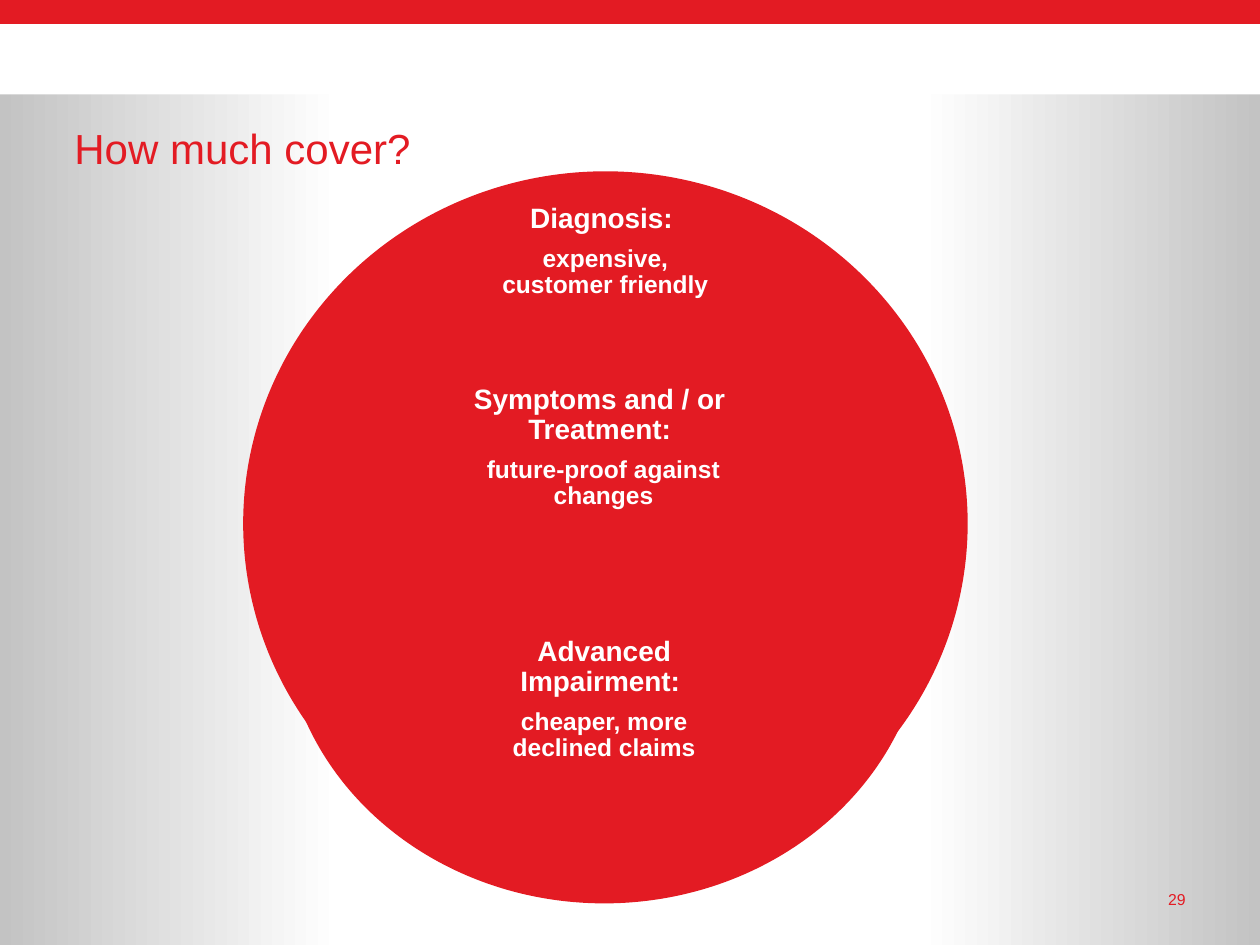
from lxml.etree import SubElement
from pptx import Presentation
from pptx.dml.color import RGBColor
from pptx.enum.shapes import MSO_SHAPE as Shape
from pptx.enum.text import MSO_ANCHOR as Anchor, PP_ALIGN as Align
from pptx.oxml.ns import qn
from pptx.util import Inches, Pt

RED = RGBColor(0xE3, 0x1B, 0x23)
WHITE = RGBColor(0xFF, 0xFF, 0xFF)
GREY = RGBColor(0xC3, 0xC3, 0xC3)
FONT = "Arial"

BACKGROUND_STOPS = [(0, GREY), (27, WHITE), (73, WHITE), (100, GREY)]
COVER_LEVELS = [
    ((1.93, 1.36, 5.75, 5.59), (3.8, 1.64, 2.01, 0.84), 0,
     "Diagnosis: ", "expensive, customer friendly"),
    ((2.24, 2.54, 5.11, 4.63), (3.6, 2.83, 2.38, 0.87), 0.7,
     "Symptoms and / or  Treatment: ", "future-proof against changes"),
    ((3.58, 4.38, 2.42, 2.34), (3.94, 4.97, 1.71, 1.17), 0.12,
     "Advanced Impairment: ", "cheaper, more declined claims"),
]


def paint_background(page):
    """Fill the page with a horizontal grey-white-grey gradient."""
    fill = page.background.fill
    fill.gradient()
    fill.gradient_angle = 0
    stops = page.background._cSld.find(".//" + qn("a:gsLst"))
    for stop in list(stops):
        stops.remove(stop)
    for percent, color in BACKGROUND_STOPS:
        stop = SubElement(stops, qn("a:gs"), pos=str(percent * 1000))
        SubElement(stop, qn("a:srgbClr"), val=str(color))


def add_solid(page, kind, place, color):
    """Add a plain filled shape without outline or shadow."""
    solid = page.shapes.add_shape(kind, *map(Inches, place))
    solid.shadow.inherit = False
    solid.fill.solid()
    solid.fill.fore_color.rgb = color
    solid.line.fill.background()


def add_box(page, place, insets, anchor=Anchor.TOP):
    """Add a wrapping text box and return its text frame."""
    frame = page.shapes.add_textbox(*map(Inches, place)).text_frame
    frame.word_wrap = True
    frame.vertical_anchor = anchor
    (frame.margin_left, frame.margin_top,
     frame.margin_right, frame.margin_bottom) = map(Inches, insets)
    return frame


def add_span(para, text, size, color, bold=False):
    """Add one formatted run to a paragraph."""
    span = para.add_run()
    span.text = text
    span.font.name = FONT
    span.font.size = Pt(size)
    span.font.bold = bold
    span.font.color.rgb = color


def add_level(page, circle, place, top_inset, heading, detail):
    """Add a circle with its heading and detail."""
    add_solid(page, Shape.OVAL, circle, RED)
    frame = add_box(page, place, (0.12, top_inset, 0.12, 0.12), Anchor.MIDDLE)
    lines = [(frame.paragraphs[0], heading, 16), (frame.add_paragraph(), detail, 14)]
    for para, text, size in lines:
        para.alignment = Align.CENTER
        para.line_spacing = 0.9
        para.space_after = Pt(6.5)
        add_span(para, text, size, WHITE, bold=True)


def main():
    """Build the slide and save it."""
    deck = Presentation()
    deck.slide_width, deck.slide_height = Inches(10), Inches(7.5)
    page = deck.slides.add_slide(deck.slide_layouts[6])
    paint_background(page)
    add_solid(page, Shape.RECTANGLE, (0, 0, 10, 0.75), WHITE)
    add_solid(page, Shape.RECTANGLE, (0, 0, 10, 0.19), RED)

    title = add_box(page, (0.59, 0.92, 8.82, 0.55), (0, 0.05, 0, 0))
    add_span(title.paragraphs[0], "How much cover?", 24, RED)
    number = add_box(page, (8.86, 7.06, 0.55, 0.24), (0, 0, 0, 0)).paragraphs[0]
    number.alignment = Align.RIGHT
    add_span(number, "29", 9, RED)

    for level in COVER_LEVELS:
        add_level(page, *level)
    deck.save("out.pptx")


if __name__ == "__main__":
    main()
